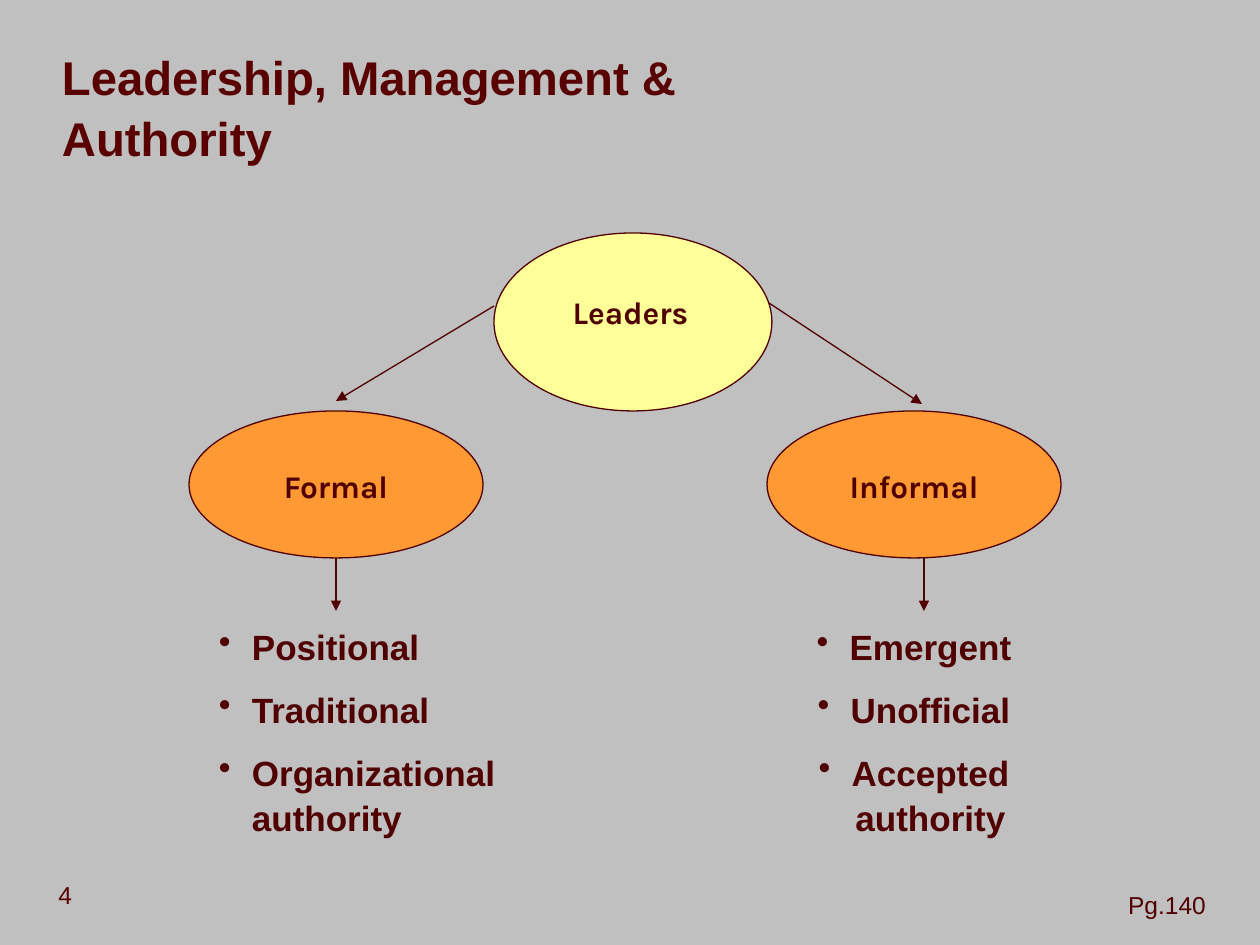
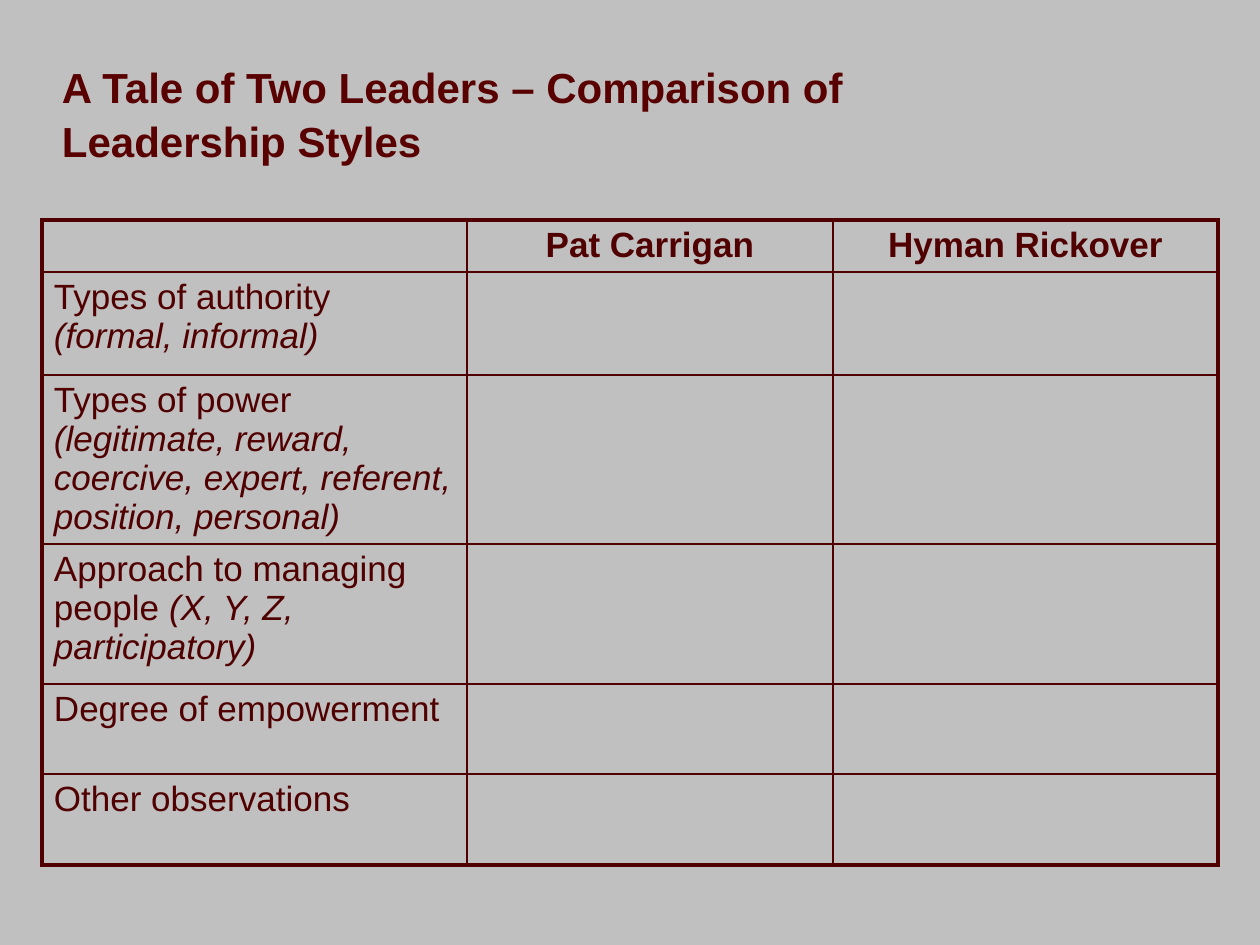
"""Builds two slides on leadership: a diagram of leader kinds and a comparison table."""
from dataclasses import dataclass

import pptx
import pptx.dml.color
import pptx.enum.shapes
import pptx.enum.text
import pptx.oxml.ns
import pptx.util
from lxml import etree

PX = 914400 / 126
COLORS = {"background": "C0C0C0", "title": "590000", "ink": "500000",
          "leaders": "FFFF99", "branch": "FF9933"}
LINE_SPACING = 1.08
LEFT = pptx.enum.text.PP_ALIGN.LEFT
CENTER = pptx.enum.text.PP_ALIGN.CENTER
RIGHT = pptx.enum.text.PP_ALIGN.RIGHT


@dataclass(frozen=True)
class Box:
    left: int
    top: int
    width: int
    height: int

    def emu(self) -> list[int]:
        return [px(n) for n in (self.left, self.top, self.width, self.height)]


@dataclass(frozen=True)
class Style:
    size: int
    font: str = "Arial"
    color: str = "ink"
    bold: bool = False
    align: pptx.enum.text.PP_ALIGN = LEFT


@dataclass(frozen=True)
class Oval:
    box: Box
    fill: str
    label: str = ""


@dataclass(frozen=True)
class Arrow:
    x1: int
    y1: int
    x2: int
    y2: int


@dataclass(frozen=True)
class TextBlock:
    box: Box
    lines: tuple[str, ...]
    style: Style
    inset_x: int = 9
    inset_y: int = 5
    bulleted: bool = False


@dataclass(frozen=True)
class Topic:
    name: str
    examples: str
    height: int


TITLE_BOX = Box(53, 94, 840, 76)
LABEL = Style(18, "Karla", bold=True, align=CENTER)
TRAITS = Style(20, bold=True)
TRAITS_CENTERED = Style(20, bold=True, align=CENTER)
HEADING = Style(20, bold=True, align=CENTER)
TOPIC = Style(20)

OVALS = (
    Oval(Box(189, 411, 294, 147), "branch", "Formal"),
    Oval(Box(767, 411, 294, 147), "branch", "Informal"),
    Oval(Box(494, 233, 278, 178), "leaders"),
)
ARROWS = (
    Arrow(336, 558, 336, 611),
    Arrow(924, 558, 924, 611),
    Arrow(494, 306, 336, 401),
    Arrow(769, 303, 922, 404),
)
TEXT_BLOCKS = (
    TextBlock(Box(494, 285, 273, 63), ("Leaders",), LABEL),
    TextBlock(Box(210, 617, 368, 223),
              ("Positional", "Traditional", "Organizational authority"),
              TRAITS, bulleted=True),
    TextBlock(Box(746, 617, 336, 265),
              ("Emergent", "Unofficial", "Accepted authority"),
              TRAITS_CENTERED, bulleted=True),
    TextBlock(Box(0, 872, 84, 63), ("4",), Style(14, color="title", align=RIGHT), 12, 6),
    TextBlock(Box(840, 882, 378, 42), ("Pg.140",), Style(14, align=RIGHT), 12, 6),
)

LEADER_NAMES = ("Pat Carrigan", "Hyman Rickover")
TOPICS = (
    Topic("Types of authority ", "(formal, informal)", 103),
    Topic("Types of power ",
          "(legitimate, reward, coercive, expert, referent, position, personal)", 169),
    Topic("Approach to managing people ", "(X, Y, Z, participatory)", 140),
    Topic("Degree of empowerment", "", 90),
    Topic("Other observations", "", 91),
)
HEADER_HEIGHT = 52
COLUMN_WIDTHS = (425, 366, 385)


def px(length: int) -> int:
    return round(length * PX)


def rgb(name: str) -> pptx.dml.color.RGBColor:
    return pptx.dml.color.RGBColor.from_string(COLORS[name])


def format_paragraph(paragraph, style: Style) -> None:
    paragraph.alignment = style.align
    font = paragraph.font
    font.size = pptx.util.Pt(style.size)
    font.name = style.font
    font.bold = style.bold
    font.color.rgb = rgb(style.color)


def set_insets(frame, x: int, y: int) -> None:
    frame.margin_left = frame.margin_right = px(x)
    frame.margin_top = frame.margin_bottom = px(y)


def add_bullet(paragraph) -> None:
    properties = paragraph._p.get_or_add_pPr()
    properties.set("marL", str(px(33)))
    properties.set("indent", str(-px(33)))
    etree.SubElement(properties, pptx.oxml.ns.qn("a:buChar"), char="•")


def add_titled_slide(deck, title: str, size: int):
    slide = deck.slides.add_slide(deck.slide_layouts[5])
    heading = slide.shapes.title
    heading.left, heading.top, heading.width, heading.height = TITLE_BOX.emu()
    frame = heading.text_frame
    frame.auto_size = pptx.enum.text.MSO_AUTO_SIZE.NONE
    frame.vertical_anchor = pptx.enum.text.MSO_ANCHOR.BOTTOM
    set_insets(frame, 9, 4)
    frame.text = title
    frame.paragraphs[0].line_spacing = LINE_SPACING
    format_paragraph(frame.paragraphs[0], Style(size, color="title", bold=True))
    return slide


def draw_text(slide, block: TextBlock) -> None:
    frame = slide.shapes.add_textbox(*block.box.emu()).text_frame
    frame.word_wrap = True
    set_insets(frame, block.inset_x, block.inset_y)
    for index, line in enumerate(block.lines):
        paragraph = frame.add_paragraph() if index else frame.paragraphs[0]
        paragraph.text = line
        paragraph.line_spacing = LINE_SPACING
        if index:
            paragraph.space_before = pptx.util.Pt(block.style.size / 2)
        if block.bulleted:
            add_bullet(paragraph)
        format_paragraph(paragraph, block.style)


def draw_oval(slide, oval: Oval) -> None:
    ellipse = slide.shapes.add_shape(pptx.enum.shapes.MSO_SHAPE.OVAL, *oval.box.emu())
    ellipse.shadow.inherit = False
    ellipse.fill.solid()
    ellipse.fill.fore_color.rgb = rgb(oval.fill)
    ellipse.line.color.rgb = rgb("ink")
    ellipse.line.width = pptx.util.Pt(0.75)
    if oval.label:
        frame = ellipse.text_frame
        frame.word_wrap = False
        frame.vertical_anchor = pptx.enum.text.MSO_ANCHOR.MIDDLE
        frame.text = oval.label
        frame.paragraphs[0].line_spacing = LINE_SPACING
        format_paragraph(frame.paragraphs[0], LABEL)


def draw_arrow(slide, arrow: Arrow) -> None:
    connector = slide.shapes.add_connector(
        pptx.enum.shapes.MSO_CONNECTOR.STRAIGHT,
        px(arrow.x1), px(arrow.y1), px(arrow.x2), px(arrow.y2))
    connector.line.color.rgb = rgb("ink")
    connector.line.width = pptx.util.Pt(0.75)
    etree.SubElement(connector.line._get_or_add_ln(),
                     pptx.oxml.ns.qn("a:tailEnd"), type="triangle")
    etree.SubElement(connector._element.spPr, pptx.oxml.ns.qn("a:effectLst"))


def set_borders(cell, outer_sides: dict[str, bool]) -> None:
    properties = cell._tc.get_or_add_tcPr()
    for side, is_outer in outer_sides.items():
        width = pptx.util.Pt(2.25 if is_outer else 1)
        border = etree.SubElement(properties, pptx.oxml.ns.qn(f"a:ln{side}"), w=str(width))
        fill = etree.SubElement(border, pptx.oxml.ns.qn("a:solidFill"))
        etree.SubElement(fill, pptx.oxml.ns.qn("a:srgbClr"), val=COLORS["ink"])


def draw_comparison(slide) -> None:
    heights = [HEADER_HEIGHT] + [topic.height for topic in TOPICS]
    box = Box(42, 220, sum(COLUMN_WIDTHS), sum(heights))
    last_row, last_column = len(heights) - 1, len(COLUMN_WIDTHS) - 1
    table = slide.shapes.add_table(len(heights), len(COLUMN_WIDTHS), *box.emu()).table
    table.first_row = table.horz_banding = False
    for column, width in zip(table.columns, COLUMN_WIDTHS):
        column.width = px(width)
    for r, height in enumerate(heights):
        table.rows[r].height = px(height)
        for c in range(len(COLUMN_WIDTHS)):
            cell = table.cell(r, c)
            set_insets(cell, 12, 6)
            set_borders(cell, {"L": c == 0, "R": c == last_column,
                               "T": r == 0, "B": r == last_row})
            cell.fill.background()
    for c, name in enumerate(LEADER_NAMES, start=1):
        paragraph = table.cell(0, c).text_frame.paragraphs[0]
        paragraph.text = name
        format_paragraph(paragraph, HEADING)
    for r, topic in enumerate(TOPICS, start=1):
        paragraph = table.cell(r, 0).text_frame.paragraphs[0]
        paragraph.text = topic.name
        format_paragraph(paragraph, TOPIC)
        if topic.examples:
            examples = paragraph.add_run()
            examples.text = topic.examples
            examples.font.italic = True


def main() -> None:
    deck = pptx.Presentation()
    deck.slide_width, deck.slide_height = px(1260), px(945)
    backdrop = deck.slide_master.background.fill
    backdrop.solid()
    backdrop.fore_color.rgb = rgb("background")

    leader_kinds = add_titled_slide(deck, "Leadership, Management &\vAuthority", 27)
    for oval in OVALS:
        draw_oval(leader_kinds, oval)
    for arrow in ARROWS:
        draw_arrow(leader_kinds, arrow)
    for block in TEXT_BLOCKS:
        draw_text(leader_kinds, block)

    draw_comparison(add_titled_slide(
        deck, "A Tale of Two Leaders – Comparison of Leadership Styles", 24))
    deck.save("out.pptx")


if __name__ == "__main__":
    main()
